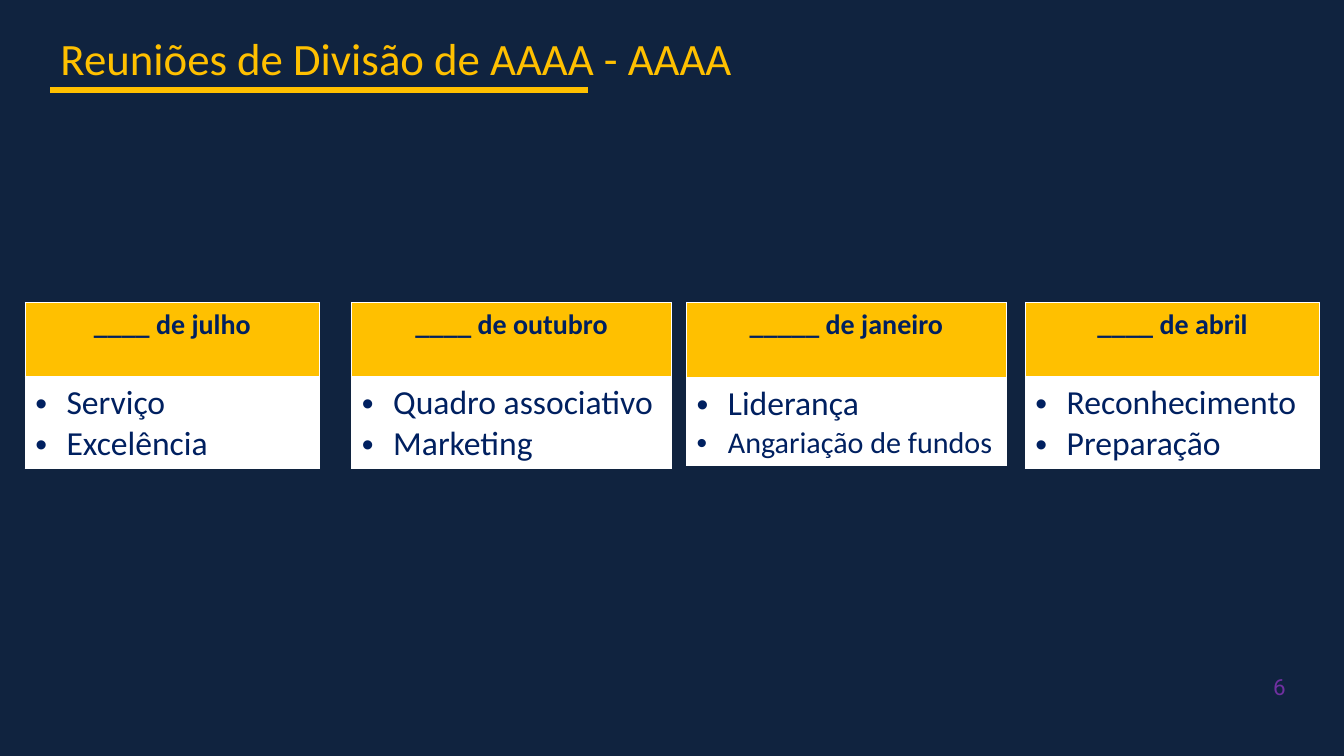
"""Build the slide that lists the four division meetings and their topics."""
from dataclasses import dataclass

from lxml import etree
from pptx import Presentation
from pptx import util as u
from pptx.dml.color import RGBColor
from pptx.enum import shapes, text
from pptx.oxml.ns import qn


@dataclass(frozen=True)
class Theme:
    night: str = "10233F"
    gold: str = "FFC000"
    navy: str = "002060"
    white: str = "FFFFFF"
    purple: str = "7030A0"
    font: str = "Calibri"
    number_font: str = "Roboto"
    title: float = 32
    topic: float = 24
    long_topic: float = 21.5
    date: float = 20
    number: float = 16


theme = Theme()


def write(frame, wording, size, color, font=theme.font, bold=False,
          align=text.PP_ALIGN.LEFT, bullet=False):
    paragraph = frame.paragraphs[0]
    if paragraph.runs:
        paragraph = frame.add_paragraph()
    paragraph.alignment = align
    if bullet:
        props = paragraph._p.get_or_add_pPr()
        props.set("marL", str(u.Inches(0.31)))
        props.set("indent", str(u.Inches(-0.31)))
        etree.SubElement(props, qn("a:buFont"), typeface="Arial")
        etree.SubElement(props, qn("a:buChar"), char="•")
    run = paragraph.add_run()
    run.text = wording
    run.font.size = u.Pt(size)
    run.font.name = font
    run.font.bold = bold
    run.font.color.rgb = RGBColor.from_string(color)


def style_cell(cell, fill, bottom_width):
    cell.fill.solid()
    cell.fill.fore_color.rgb = RGBColor.from_string(fill)
    props = cell._tc.get_or_add_tcPr()
    for place, side in enumerate("LRTB"):
        width = bottom_width if side == "B" else 1
        border = etree.Element(qn(f"a:ln{side}"), w=str(u.Pt(width)))
        solid = etree.SubElement(border, qn("a:solidFill"))
        etree.SubElement(solid, qn("a:srgbClr"), val=theme.white)
        props.insert(place, border)


deck = Presentation()
deck.slide_width, deck.slide_height = u.Inches(13.33), u.Inches(7.5)
slide = deck.slides.add_slide(deck.slide_layouts[5])
slide.background.fill.solid()
slide.background.fill.fore_color.rgb = RGBColor.from_string(theme.night)

heading = slide.shapes.title
heading.left, heading.top = u.Inches(0.5), u.Inches(0.25)
heading.width, heading.height = u.Inches(7), u.Inches(0.64)
heading.text_frame.vertical_anchor = text.MSO_ANCHOR.TOP
heading.text_frame.auto_size = text.MSO_AUTO_SIZE.SHAPE_TO_FIT_TEXT
write(heading.text_frame, "Reuniões de Divisão de AAAA - AAAA", theme.title, theme.gold)

underline = slide.shapes.add_connector(
    shapes.MSO_CONNECTOR.STRAIGHT,
    u.Inches(0.5), u.Inches(0.89), u.Inches(5.83), u.Inches(0.89))
underline.line.color.rgb = RGBColor.from_string(theme.gold)
underline.line.width = u.Pt(4.5)
etree.SubElement(underline._element.spPr, qn("a:effectLst"))

meetings = [
    (0.25, 2.92, 0.75, "____ de julho",
     [("Serviço", theme.topic), ("Excelência", theme.topic)]),
    (3.49, 3.17, 0.75, "____ de outubro",
     [("Quadro associativo", theme.topic), ("Marketing", theme.topic)]),
    (6.81, 3.17, 0.76, "_____ de janeiro",
     [("Liderança", theme.topic), ("Angariação de fundos", theme.long_topic)]),
    (10.17, 2.92, 0.75, "____ de abril",
     [("Reconhecimento", theme.topic), ("Preparação", theme.topic)]),
]
for left, width, date_height, date, topics in meetings:
    meeting = slide.shapes.add_table(
        2, 1, u.Inches(left), u.Inches(3), u.Inches(width),
        u.Inches(date_height + 0.84)).table
    meeting.rows[0].height = u.Inches(date_height)
    meeting.rows[1].height = u.Inches(0.84)
    date_cell, topics_cell = meeting.cell(0, 0), meeting.cell(1, 0)
    style_cell(date_cell, theme.gold, bottom_width=3)
    style_cell(topics_cell, theme.white, bottom_width=1)
    write(date_cell.text_frame, date, theme.date, theme.navy, bold=True,
          align=text.PP_ALIGN.CENTER)
    for topic, size in topics:
        write(topics_cell.text_frame, topic, size, theme.navy, bullet=True)

page_number = slide.shapes.add_textbox(
    u.Inches(12.14), u.Inches(6.63), u.Inches(0.61), u.Inches(0.37)).text_frame
page_number.word_wrap = True
page_number.auto_size = text.MSO_AUTO_SIZE.SHAPE_TO_FIT_TEXT
page_number.vertical_anchor = text.MSO_ANCHOR.MIDDLE
page_number.margin_left = page_number.margin_right = 0
write(page_number, "6", theme.number, theme.purple, font=theme.number_font,
      align=text.PP_ALIGN.RIGHT)

deck.save("out.pptx")
